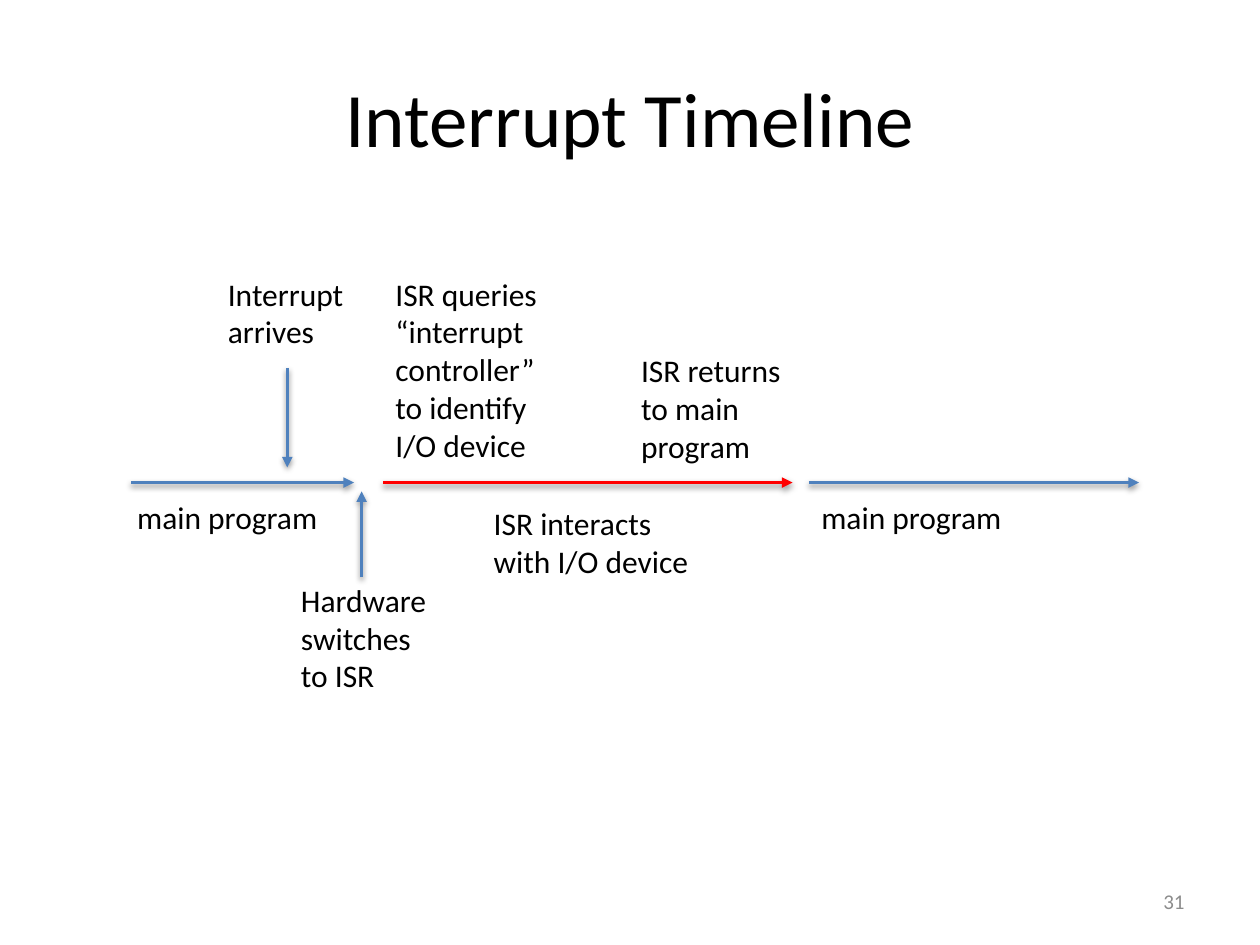
from lxml.etree import SubElement
from pptx import Presentation
from pptx.dml.color import RGBColor
from pptx.enum.shapes import MSO_CONNECTOR
from pptx.enum.text import MSO_ANCHOR, PP_ALIGN
from pptx.oxml.ns import qn
from pptx.util import Inches, Pt

BLACK = RGBColor(0x00, 0x00, 0x00)
GRAY = RGBColor(0x8C, 0x8C, 0x8C)
BLUE = RGBColor(0x4F, 0x81, 0xBD)
RED = RGBColor(0xFF, 0x00, 0x00)
FONT = "Calibri"

# The page is a grid of 100 columns by 75 rows; boxes are left, top, width, height
CELL = Inches(0.1)
TITLE_BOX = (5, 3, 90, 12.5)
TIMELINE_BOX = (10.4, 21.3, 80, 34.4)
NUMBER_BOX = (71.7, 69.5, 23.3, 4)


def cells(*counts):
    return [round(count * CELL) for count in counts]


def format_text(frame, size, color, align, anchor):
    frame.word_wrap = True
    frame.vertical_anchor = anchor
    for para in frame.paragraphs:
        para.alignment = align
        para.font.name = FONT
        para.font.size = Pt(size)
        para.font.color.rgb = color


def add_label(page, box, text, size=18, color=BLACK,
              align=PP_ALIGN.LEFT, anchor=MSO_ANCHOR.TOP):
    label = page.shapes.add_textbox(*cells(*box))
    label.text_frame.text = text
    format_text(label.text_frame, size, color, align, anchor)
    return label


def add_arrow(page, start, end, color):
    """Draw an arrow; the theme's connector style supplies its soft shadow."""
    arrow = page.shapes.add_connector(MSO_CONNECTOR.STRAIGHT, *cells(*start, *end))
    arrow.line.color.rgb = color
    arrow.line.width = Pt(2)
    SubElement(arrow.line._get_or_add_ln(), qn("a:tailEnd"), type="triangle")


def add_title(page, box, text):
    title = page.shapes.title
    title.left, title.top, title.width, title.height = cells(*box)
    title.text_frame.text = text
    format_text(title.text_frame, 44, BLACK, PP_ALIGN.CENTER, MSO_ANCHOR.MIDDLE)


def add_timeline(page, box):
    left, top, width, height = box
    axis = top + 17

    # Phases along the time axis: start column, end column, colour
    for start, end, color in [(0, 17.7, BLUE), (20, 52.5, RED), (53.8, width, BLUE)]:
        add_arrow(page, (left + start, axis), (left + min(end, 80), axis), color)

    # Events pointing at the axis: column, start row, end row
    for column, start, end in [(12.4, 7.9, 15.8), (18.3, 24.5, 17.7)]:
        add_arrow(page, (left + column, top + start), (left + column, top + end), BLUE)

    # Labels: column, row, width, height, text
    labels = [
        (-0.5, 17.7, 17.1, 4, "main program"),
        (6.7, 0, 12.5, 7.1, "Interrupt arrives"),
        (12.5, 24.3, 12.5, 10.1, "Hardware switches to ISR"),
        (20, 0, 14.6, 16.2, "ISR queries “interrupt controller” to identify I/O device"),
        (27.8, 18.2, 19.2, 7.1, "ISR interacts with I/O device"),
        (39.5, 6.1, 14.6, 10.1, "ISR returns to main program"),
        (53.8, 17.7, 17.1, 4, "main program"),
    ]
    for column, row, label_width, label_height, text in labels:
        add_label(page, (left + column, top + row, label_width, label_height), text)


def add_page_number(page, box, number):
    add_label(page, box, str(number), 12, GRAY, PP_ALIGN.RIGHT, MSO_ANCHOR.MIDDLE)


def main():
    deck = Presentation()
    deck.slide_width, deck.slide_height = cells(100, 75)
    title_only = deck.slide_layouts[5]
    page = deck.slides.add_slide(title_only)
    add_title(page, TITLE_BOX, "Interrupt Timeline")
    add_timeline(page, TIMELINE_BOX)
    add_page_number(page, NUMBER_BOX, 31)
    deck.save("out.pptx")


if __name__ == "__main__":
    main()
